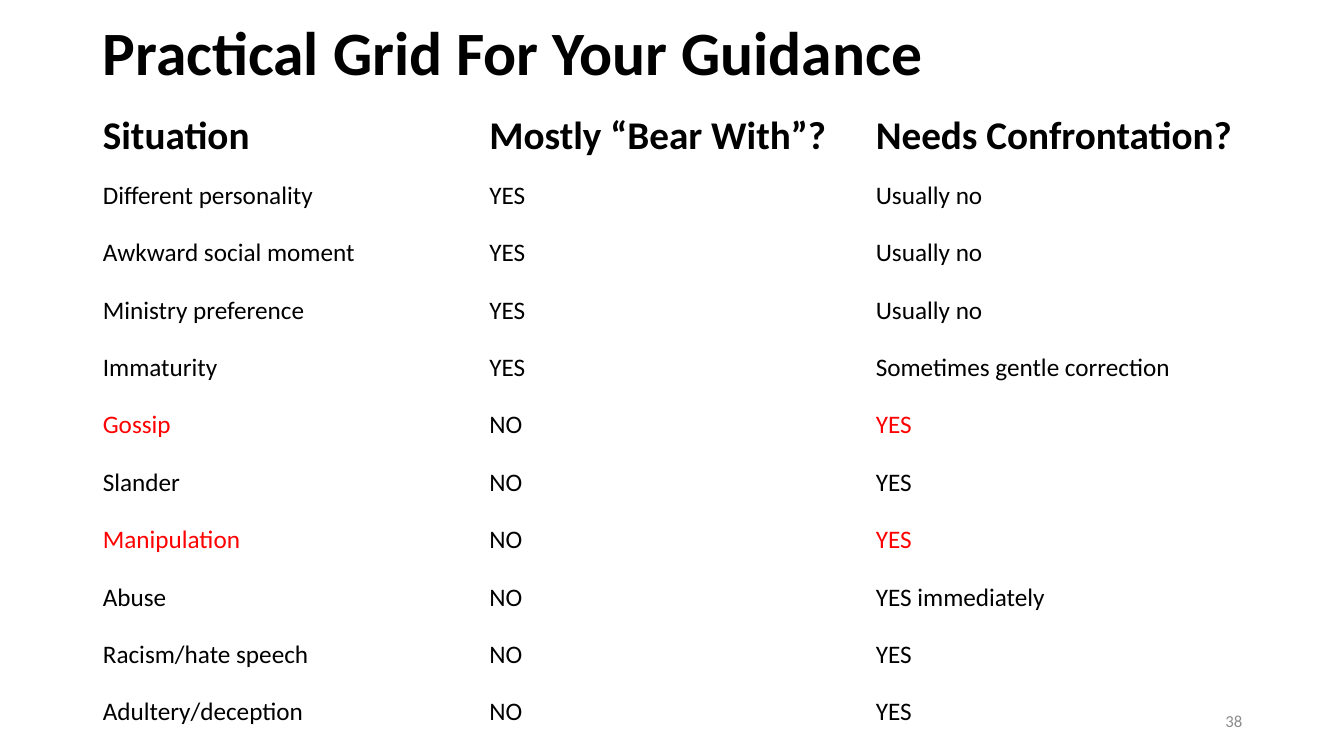
from pptx import Presentation
from pptx import util as u
from pptx.dml import color
from pptx.enum import text

BLACK, RED, GRAY = "000000", "FF0000", "8C8C8C"
HEADINGS = ("Situation", "Mostly “Bear With”?", "Needs Confrontation?")
SITUATIONS = (
    ("Different personality", "YES", "Usually no"),
    ("Awkward social moment", "YES", "Usually no"),
    ("Ministry preference", "YES", "Usually no"),
    ("Immaturity", "YES", "Sometimes gentle correction"),
    ("Gossip", "NO", "YES"),
    ("Slander", "NO", "YES"),
    ("Manipulation", "NO", "YES"),
    ("Abuse", "NO", "YES immediately"),
    ("Racism/hate speech", "NO", "YES"),
    ("Adultery/deception", "NO", "YES"),
)
HIGHLIGHTED = ("Gossip", "Manipulation")
HEADING_HEIGHT = 0.62


def rgb(value):
    return color.RGBColor.from_string(value)


def set_attributes(target, values):
    for name, value in values.items():
        setattr(target, name, value)


def write(paragraph, content, size, fill=BLACK, bold=False):
    run = paragraph.add_run()
    run.text = content
    set_attributes(run.font, {"name": "Calibri", "size": u.Pt(size), "bold": bold})
    run.font.color.rgb = rgb(fill)


def add_label(slide, box, content, size, paragraph_format, **style):
    frame = slide.shapes.add_textbox(*map(u.Inches, box)).text_frame
    set_attributes(frame, {"word_wrap": True, "vertical_anchor": text.MSO_ANCHOR.MIDDLE})
    paragraph = frame.paragraphs[0]
    set_attributes(paragraph, paragraph_format)
    write(paragraph, content, size, **style)


def add_guidance_table(slide, box):
    left, top, width, height = box
    rows = (HEADINGS, *SITUATIONS)
    table = slide.shapes.add_table(
        len(rows), len(HEADINGS), *map(u.Inches, box)).table
    set_attributes(table, {"first_row": False, "horz_banding": False})
    for column in table.columns:
        column.width = u.Inches(width / len(HEADINGS))
    row_height = (height - HEADING_HEIGHT) / len(SITUATIONS)
    for row_index, values in enumerate(rows):
        heading = row_index == 0
        table.rows[row_index].height = u.Inches(HEADING_HEIGHT if heading else row_height)
        for column_index, value in enumerate(values):
            cell = table.cell(row_index, column_index)
            cell.fill.background()
            cell.vertical_anchor = text.MSO_ANCHOR.MIDDLE
            highlighted = values[0] in HIGHLIGHTED and column_index != 1
            write(cell.text_frame.paragraphs[0], value, 28 if heading else 18,
                  RED if highlighted else BLACK, heading)


def build_guidance_slide(presentation):
    slide = presentation.slides.add_slide(presentation.slide_layouts[6])
    add_label(slide, (0.92, 0.07, 11.5, 0.97), "Practical Grid For Your Guidance",
              44, {"line_spacing": 0.9}, bold=True)
    add_guidance_table(slide, (0.92, 1.04, 11.5, 6.31))
    add_label(slide, (9.42, 6.95, 3, 0.4), "38", 12,
              {"alignment": text.PP_ALIGN.RIGHT}, fill=GRAY)


def main():
    presentation = Presentation()
    set_attributes(presentation, {"slide_width": u.Inches(13.33),
                                  "slide_height": u.Inches(7.5)})
    build_guidance_slide(presentation)
    presentation.save("out.pptx")


if __name__ == "__main__":
    main()
